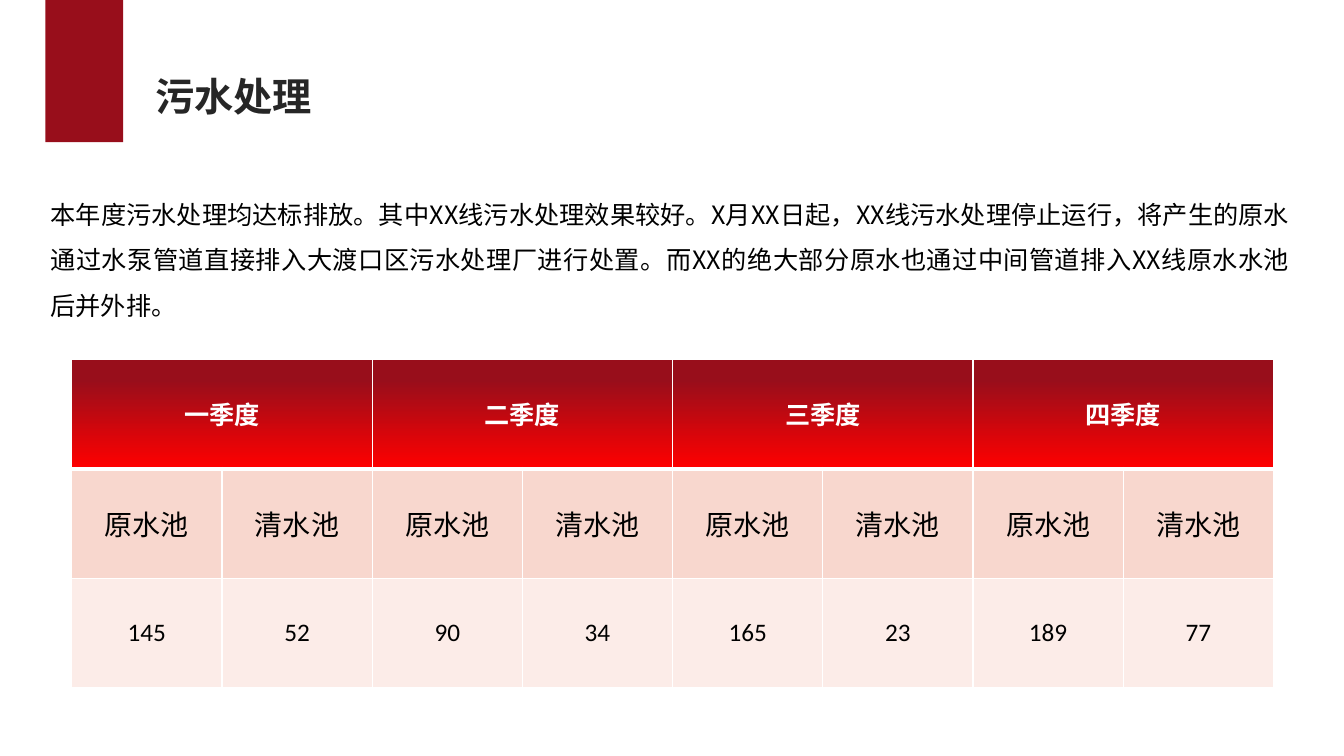
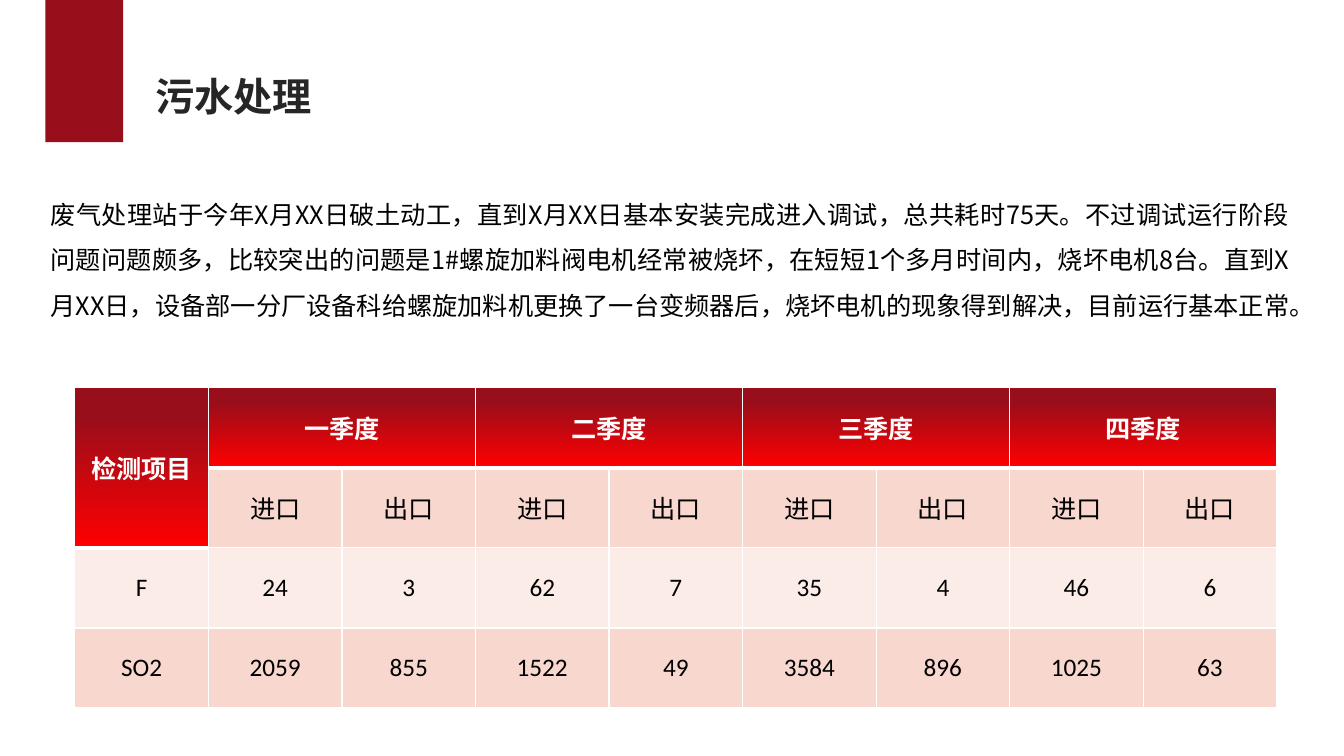
from lxml import etree
from pptx import Presentation
from pptx import util as u
from pptx.dml.color import RGBColor
from pptx.enum import shapes, text
from pptx.oxml import ns

QUARTERS = ["一季度", "二季度", "三季度", "四季度"]


def colour(code):
    return RGBColor.from_string(code)


class Report:
    CRIMSON, RED, WHITE, BLACK, INK = "980E1B", "FF0000", "FFFFFF", "000000", "262626"
    BANDS = ["FCECE8", "F8D7CE"]
    CJK, LATIN = "Noto Sans CJK SC", "Calibri"

    def __init__(self):
        self.deck = Presentation()
        self.deck.slide_width, self.deck.slide_height = u.Pt(960), u.Pt(540)
        self.slide = None

    def page(self, title):
        self.slide = self.deck.slides.add_slide(self.deck.slide_layouts[6])
        tab = self.slide.shapes.add_shape(
            shapes.MSO_SHAPE.RECTANGLE, u.Pt(32.5), u.Pt(0), u.Pt(55.5), u.Pt(101.5))
        tab.shadow.inherit = False
        tab.fill.solid()
        tab.fill.fore_color.rgb = colour(self.CRIMSON)
        tab.line.fill.background()
        heading = self.textbox(104, 48, 127, 41, title, wrap=False)
        self.style(heading, 28, self.INK, self.CJK, bold=True)

    def textbox(self, left, top, width, height, words, wrap=True):
        frame = self.slide.shapes.add_textbox(
            u.Pt(left), u.Pt(top), u.Pt(width), u.Pt(height)).text_frame
        frame.word_wrap = wrap
        frame.auto_size = text.MSO_AUTO_SIZE.SHAPE_TO_FIT_TEXT
        frame.text = words
        return frame.paragraphs[0]

    def style(self, paragraph, size, code, latin, bold=False):
        font = paragraph.font
        font.size, font.bold, font.name = u.Pt(size), bold, latin
        font.color.rgb = colour(code)
        defaults = paragraph._p.pPr.find(ns.qn("a:defRPr"))
        etree.SubElement(defaults, ns.qn("a:ea")).set("typeface", self.CJK)

    def summary(self, height, words):
        paragraph = self.textbox(29, 128, 899, height, words)
        paragraph.alignment = text.PP_ALIGN.JUSTIFY
        paragraph.line_spacing = 1.5
        self.style(paragraph, 18, self.BLACK, self.CJK)

    def borders(self, cell, top, bottom):
        properties = cell._tc.get_or_add_tcPr()
        edges = {"lnL": 1, "lnR": 1, "lnT": top, "lnB": bottom}
        for place, (edge, width) in enumerate(edges.items()):
            line = etree.Element(ns.qn(f"a:{edge}"), w=str(u.Pt(width)))
            fill = etree.SubElement(line, ns.qn("a:solidFill"))
            etree.SubElement(fill, ns.qn("a:srgbClr")).set("val", self.WHITE)
            properties.insert(place, line)

    def header_fill(self, cell, start):
        cell.fill.gradient()
        cell.fill.gradient_angle = 270
        stops = zip(cell.fill.gradient_stops, (start, 1), (self.CRIMSON, self.RED))
        for stop, position, code in stops:
            stop.position = position
            stop.color.rgb = colour(code)

    def quarter_table(self, left, top, row_height, pair, records,
                      start, pair_size=18, corner=None):
        lead = 1 if corner else 0
        header = [corner] * lead + [word for name in QUARTERS for word in (name, "")]
        grid = [header, [""] * lead + pair * len(QUARTERS)] + records
        table = self.slide.shapes.add_table(
            len(grid), len(header), u.Pt(left), u.Pt(top),
            u.Pt(858.5), u.Pt(row_height * len(grid))).table
        table.horz_banding = False
        for row in table.rows:
            row.height = u.Pt(row_height)
        for column in table.columns:
            column.width = u.Pt(858.5 / len(header))

        for r, values in enumerate(grid):
            for c, value in enumerate(values):
                cell = table.cell(r, c)
                is_header = r == 0 or (r == 1 and c < lead)
                under_header = r == 1 or (r == 2 and c < lead)
                if is_header:
                    self.header_fill(cell, start)
                else:
                    cell.fill.solid()
                    cell.fill.fore_color.rgb = colour(self.BANDS[r % 2])
                self.borders(cell, 3 if under_header else 1, 3 if is_header else 1)
                cell.vertical_anchor = text.MSO_ANCHOR.MIDDLE
                cell.text = str(value)
                paragraph = cell.text_frame.paragraphs[0]
                paragraph.alignment = text.PP_ALIGN.CENTER
                self.style(paragraph, pair_size if r == 1 else 18,
                           self.WHITE if is_header else self.BLACK,
                           self.LATIN, bold=is_header)

        for c in range(lead, len(header), 2):
            table.cell(0, c).merge(table.cell(0, c + 1))
        if corner:
            table.cell(0, 0).merge(table.cell(1, 0))


def main():
    report = Report()

    report.page("污水处理")
    report.summary(101.5, "本年度污水处理均达标排放。其中XX线污水处理效果较好。X月XX日起，"
                   "XX线污水处理停止运行，将产生的原水通过水泵管道直接排入大渡口区污水处理厂进行处置。"
                   "而XX的绝大部分原水也通过中间管道排入XX线原水水池后并外排。")
    report.quarter_table(51.25, 256.5, 78.3, ["原水池", "清水池"],
                         [[145, 52, 90, 34, 165, 23, 189, 77]],
                         start=0.19, pair_size=20)

    report.page("污水处理")
    report.summary(134.5, "废气处理站于今年X月XX日破土动工，直到X月XX日基本安装完成进入调试，"
                   "总共耗时75天。不过调试运行阶段问题问题颇多，比较突出的问题是1#螺旋加料阀电机经常被烧坏，"
                   "在短短1个多月时间内，烧坏电机8台。直到X月XX日，设备部一分厂设备科给螺旋加料机更换了"
                   "一台变频器后，烧坏电机的现象得到解决，目前运行基本正常。")
    report.quarter_table(53.5, 277, 57.2, ["进口", "出口"],
                         [["F", 24, 3, 62, 7, 35, 4, 46, 6],
                          ["SO2", 2059, 855, 1522, 49, 3584, 896, 1025, 63]],
                         start=0.17, corner="检测项目")

    report.deck.save("out.pptx")


if __name__ == "__main__":
    main()
